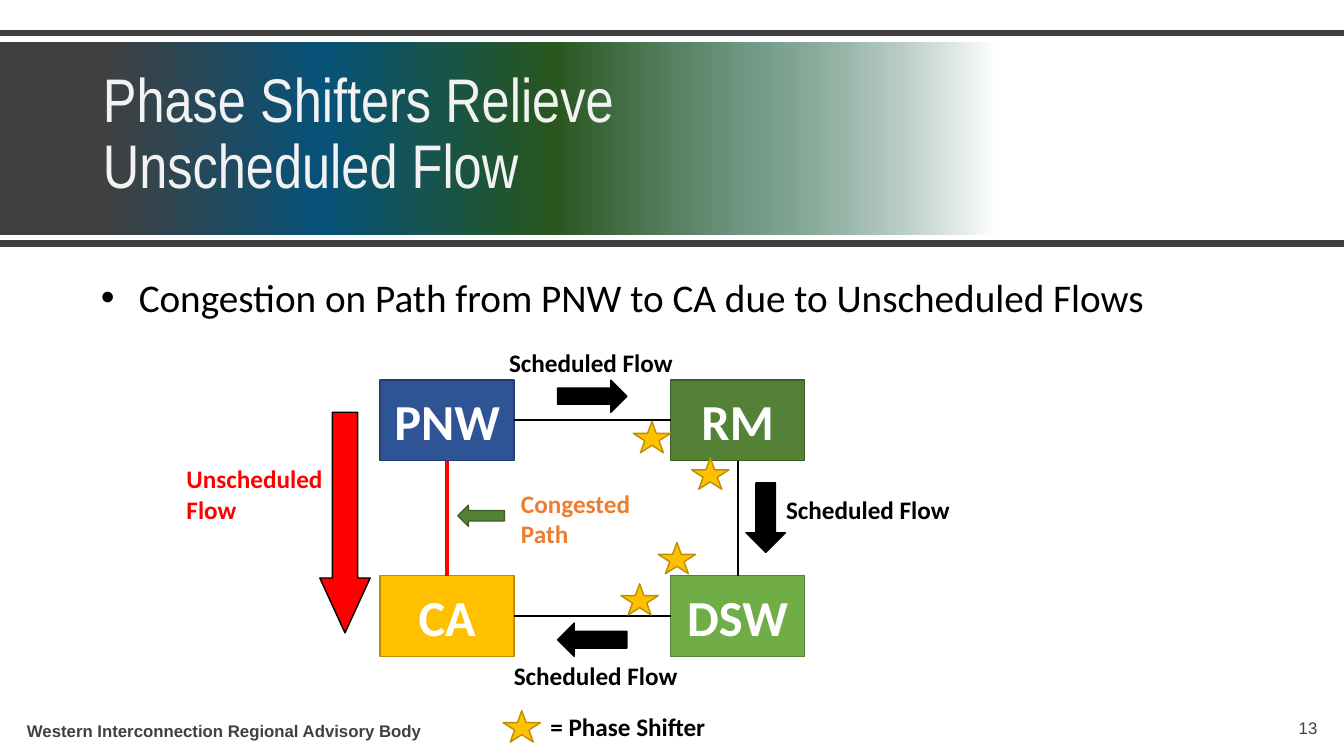
from lxml.etree import SubElement as Sub
from pptx import Presentation
from pptx.dml.color import RGBColor as Rgb
from pptx.enum.shapes import MSO_CONNECTOR as Conn, MSO_SHAPE as Kind
from pptx.enum.text import MSO_ANCHOR as Anchor, MSO_AUTO_SIZE as Auto, PP_ALIGN as Align
from pptx.oxml.ns import qn
from pptx.util import Cm, Pt

BLACK = Rgb(0x00, 0x00, 0x00)
WHITE = Rgb(0xFF, 0xFF, 0xFF)
PALE = Rgb(0xF2, 0xF2, 0xF2)
GREY = Rgb(0x40, 0x40, 0x40)
RED = Rgb(0xFF, 0x00, 0x00)
ORANGE = Rgb(0xED, 0x7D, 0x31)
NAVY = Rgb(0x2F, 0x54, 0x96)
NAVY_EDGE = Rgb(0x23, 0x3E, 0x6F)
GOLD = Rgb(0xFF, 0xC0, 0x00)
GOLD_EDGE = Rgb(0xBD, 0x8E, 0x00)
GREEN = Rgb(0x53, 0x81, 0x35)
GREEN_EDGE = Rgb(0x3D, 0x5F, 0x27)
LIME = Rgb(0x70, 0xAD, 0x47)
LIME_EDGE = Rgb(0x53, 0x80, 0x35)
SEA = Rgb(0x06, 0x52, 0x79)
WOOD = Rgb(0x28, 0x56, 0x1E)
SAGE = Rgb(0x3B, 0x73, 0x5A)

# Gradient stops: position %, colour, opacity %
STOPS = [(8, GREY, 100), (24, SEA, 100), (41, WOOD, 100), (57, SAGE, 69), (74, WHITE, 95)]

HEAD = {"name": "Arial Narrow", "size": Pt(44), "bold": False}
LIST = {"name": "Calibri", "size": Pt(28)}
NODE = {"name": "Calibri", "size": Pt(36), "bold": True}
LABEL = {"name": "Calibri", "size": Pt(18), "bold": True}
FOOT = {"name": "Arial", "size": Pt(12), "bold": True}
PAGE = {"name": "Arial", "size": Pt(12), "bold": False}


def write(shape, text, style, color, align=Align.LEFT, **frame):
    tf = shape.text_frame
    tf.text = text
    for key, val in frame.items():
        setattr(tf, key, val)
    for para in tf.paragraphs:
        para.alignment = align
        for key, val in style.items():
            setattr(para.font, key, val)
        para.font.color.rgb = color


def label(slide, box, text, style, color, align=Align.LEFT, wrap=False):
    shape = slide.shapes.add_textbox(*map(Cm, box))
    write(shape, text, style, color, align, word_wrap=wrap)


def draw(slide, kind, box, fill, edge, turn=0):
    shape = slide.shapes.add_shape(kind, *map(Cm, box))
    shape.shadow.inherit = False
    shape.fill.solid()
    shape.fill.fore_color.rgb = fill
    shape.line.color.rgb = edge
    shape.line.width = Pt(1)
    shape.rotation = turn
    return shape


def rule(slide, ends, color, width):
    line = slide.shapes.add_connector(Conn.STRAIGHT, *map(Cm, ends))
    line.line.color.rgb = color
    line.line.width = Pt(width)
    Sub(line._element.spPr, qn("a:effectLst"))
    return line


def place(shape, box):
    for key, val in zip(("left", "top", "width", "height"), box):
        setattr(shape, key, Cm(val))


def header(slide, x, y, w, h):
    # Fading band
    band = slide.shapes.add_shape(Kind.RECTANGLE, *map(Cm, (x, y, w, h)))
    band.shadow.inherit = False
    band.line.fill.background()
    band.fill.gradient()
    band.fill.gradient_angle = 0
    stops = band._element.spPr.find(qn("a:gradFill")).find(qn("a:gsLst"))
    for old in list(stops):
        stops.remove(old)
    for pos, color, alpha in STOPS:
        stop = Sub(stops, qn("a:gs"), pos=str(pos * 1000))
        tint = Sub(stop, qn("a:srgbClr"), val=str(color))
        Sub(tint, qn("a:alpha"), val=str(alpha * 1000))
    # Rules above and below
    for dy in (h + 0.25, -0.23, h + 0.22):
        rule(slide, (x, y + dy, x + w, y + dy), GREY, 4.5)
    # Title, brought in front of the band
    title = slide.shapes.title
    slide.shapes._spTree.append(title._element)
    place(title, (x + 2.34, y + 0.4, 20.4, 3.89))
    write(title, "Phase Shifters Relieve Unscheduled Flow", HEAD, PALE,
          vertical_anchor=Anchor.MIDDLE, auto_size=Auto.NONE, word_wrap=True)
    title.text_frame.paragraphs[0].line_spacing = 0.9


def bullet(slide, x, y, w, h):
    body = slide.placeholders[1]
    slide.shapes._spTree.append(body._element)
    place(body, (x, y, w, h))
    body.text_frame.text = ""
    para = body.text_frame.paragraphs[0]
    props = para._p.get_or_add_pPr()
    props.set("marL", str(Cm(0.64)))
    props.set("indent", str(-Cm(0.64)))
    Sub(props, qn("a:buFont"), typeface="Arial")
    Sub(props, qn("a:buChar"), char="•")
    write(body, "Congestion on Path from PNW to CA due to Unscheduled Flows", LIST, BLACK,
          vertical_anchor=Anchor.TOP, auto_size=Auto.NONE, word_wrap=True)
    para.line_spacing = 0.9
    para.space_before = Pt(0)


def footer(slide, x, y, w, h):
    label(slide, (x, y + 0.07, 11.43, h), "Western Interconnection Regional Advisory Body",
          FOOT, GREY, wrap=True)
    label(slide, (x + w - 7.62, y, 7.62, h), "13", PAGE, GREY, Align.RIGHT, True)


def flow(slide, x, y):
    # Four regions on a two by two grid
    node = {}
    for name, col, row, fill, edge in [
            ("PNW", 0, 0, NAVY, NAVY_EDGE), ("CA", 0, 1, GOLD, GOLD_EDGE),
            ("RM", 1, 0, GREEN, GREEN_EDGE), ("DSW", 1, 1, LIME, LIME_EDGE)]:
        box = (x + 7.32 * col, y + 4.93 * row, 3.38, 2.03)
        node[name] = draw(slide, Kind.RECTANGLE, box, fill, edge)
        write(node[name], name, NODE, WHITE, Align.CENTER,
              vertical_anchor=Anchor.MIDDLE, word_wrap=False)

    # Paths between regions
    for start, out, end, into, color, width in [
            ("CA", 0, "PNW", 2, RED, 3), ("DSW", 0, "RM", 2, BLACK, 1.5),
            ("CA", 3, "DSW", 1, BLACK, 1.5), ("RM", 1, "PNW", 3, BLACK, 1.5)]:
        line = rule(slide, (x, y, x, y), color, width)
        line.begin_connect(node[start], out)
        line.end_connect(node[end], into)

    # Flow arrows
    for dx, dy, w, h, turn, fill, edge in [
            (4.47, 0, 1.75, 0.81, 0, BLACK, BLACK),
            (4.47, 6.12, 1.75, 0.84, 180, BLACK, BLACK),
            (8.84, 2.97, 1.75, 0.99, 90, BLACK, BLACK),
            (1.96, 3.15, 1.17, 0.53, 180, GREEN, GREEN_EDGE)]:
        draw(slide, Kind.RIGHT_ARROW, (x + dx, y + dy, w, h), fill, edge, turn)
    down = draw(slide, Kind.DOWN_ARROW, (x - 1.52, y + 0.81, 1.27, 5.56), RED, BLACK)
    down.adjustments[0] = 0.5
    down.adjustments[1] = 1.09

    # Labels and legend
    for dx, dy, w, h, text, color, wrap in [
            (3, -0.94, 4.67, 1.02, "Scheduled Flow", BLACK, False),
            (-5.13, 1.98, 3.96, 1.8, "Unscheduled\nFlow", RED, False),
            (9.98, 2.74, 4.67, 1.02, "Scheduled Flow", BLACK, False),
            (3.12, 6.93, 4.67, 1.02, "Scheduled Flow", BLACK, False),
            (3.3, 2.59, 3.58, 1.8, "Congested Path", ORANGE, True),
            (4.04, 8.23, 4.47, 1.02, "= Phase Shifter", BLACK, False)]:
        label(slide, (x + dx, y + dy, w, h), text, LABEL, color, wrap=wrap)

    # Phase shifters, the last one in the legend
    for dx, dy in [(7.01, 4.09), (6.07, 5.13), (7.85, 1.96), (6.38, 1.04), (3.1, 8.33)]:
        draw(slide, Kind.STAR_5_POINT, (x + dx, y + dy, 0.94, 0.79), GOLD, GOLD_EDGE)


def main():
    deck = Presentation()
    deck.slide_width, deck.slide_height = Cm(33.87), Cm(19.05)
    slide = deck.slides.add_slide(deck.slide_layouts[1])
    header(slide, 0, 1.07, 33.87, 4.83)
    footer(slide, 0.43, 17.96, 33.02, 0.76)
    bullet(slide, 2.29, 6.76, 29.21, 1.93)
    flow(slide, 9.58, 9.58)
    deck.save("out.pptx")


if __name__ == "__main__":
    main()
